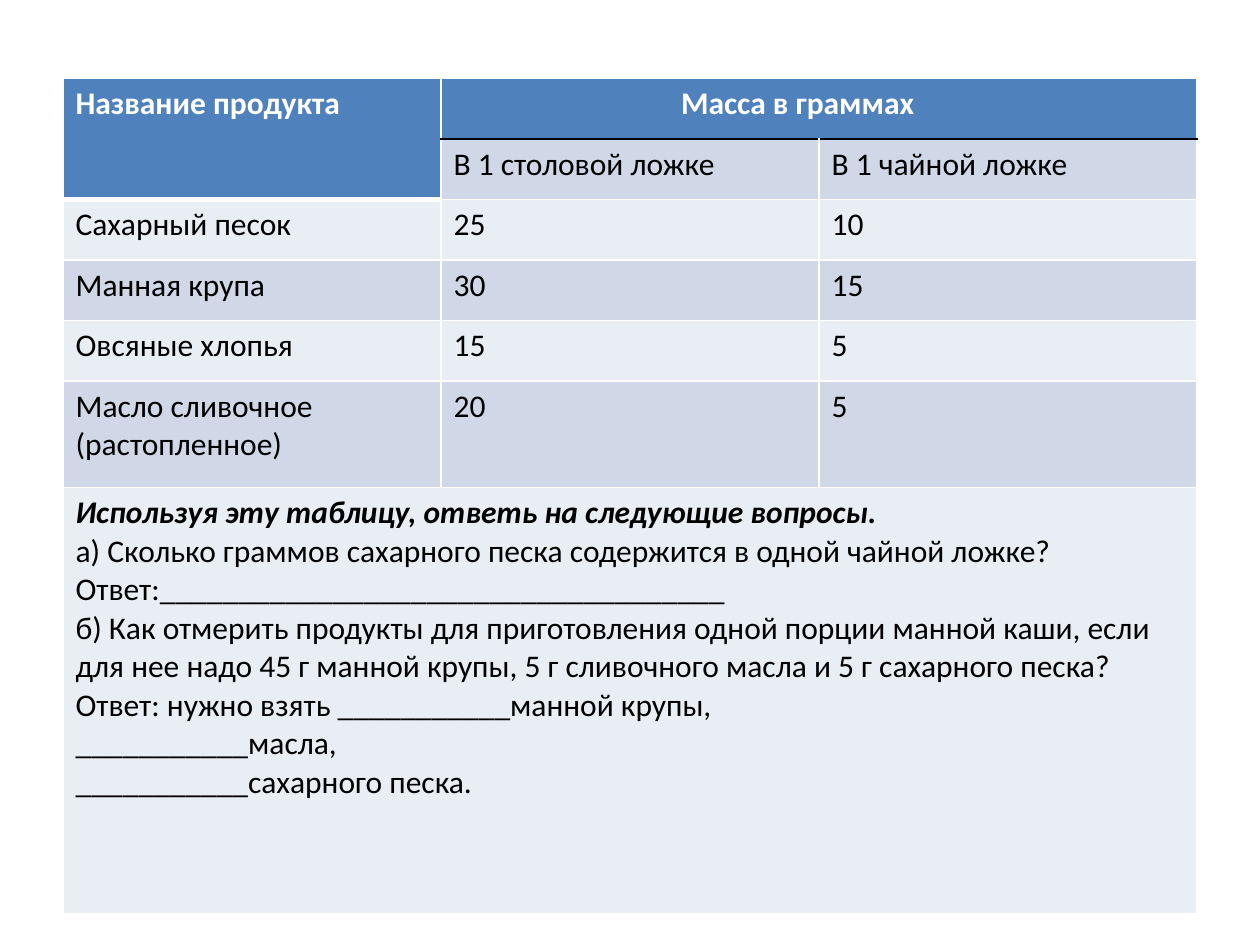
from dataclasses import dataclass

from lxml.etree import SubElement
from pptx import Presentation
from pptx.dml.color import RGBColor as Rgb
from pptx.oxml.ns import qn
from pptx.util import Cm, Pt


@dataclass(frozen=True)
class Theme:
    """Colours, font and type size of the slide."""
    font: str = "Calibri"
    size: float = 18
    header: str = "4F81BD"
    bands: tuple = ("E9EDF4", "D0D8E8")
    light: str = "FFFFFF"
    dark: str = "000000"


@dataclass(frozen=True)
class Box:
    """Position and size of a region in centimetres."""
    left: float
    top: float
    width: float
    height: float


THEME = Theme()
PRODUCTS = [
    ("Сахарный песок", "25", "10"),
    ("Манная крупа", "30", "15"),
    ("Овсяные хлопья", "15", "5"),
    ("Масло сливочное (растопленное)", "20", "5"),
]
TASK = "Используя эту таблицу, ответь на следующие вопросы."
BLANK = "_" * 11
QUESTIONS = [
    "а) Сколько граммов сахарного песка содержится в одной чайной ложке?",
    "Ответ:" + "_" * 36,
    "б) Как отмерить продукты для приготовления одной порции манной каши, "
    "если для нее надо 45 г манной крупы, 5 г сливочного масла и 5 г сахарного песка?",
    f"Ответ: нужно взять {BLANK}манной крупы,",
    f"{BLANK}масла,",
    f"{BLANK}сахарного песка.",
]


def write(paragraph, text, color=THEME.dark, bold=False, italic=False):
    """Add one formatted run to a paragraph."""
    run = paragraph.add_run()
    run.text = text
    run.font.name, run.font.size = THEME.font, Pt(THEME.size)
    run.font.bold, run.font.italic = bold, italic
    run.font.color.rgb = Rgb.from_string(color)


def paint(cell, fill, **edges):
    """Fill a cell and rule its edges, white and 1 pt unless given."""
    properties = cell._tc.get_or_add_tcPr()
    for side in "LRTB":
        color, width = edges.get(side, (THEME.light, 1))
        line = SubElement(properties, qn(f"a:ln{side}"), w=str(Pt(width)))
        solid = SubElement(line, qn("a:solidFill"))
        SubElement(solid, qn("a:srgbClr"), val=color)
    cell.fill.solid()
    cell.fill.fore_color.rgb = Rgb.from_string(fill)


def fill_header(grid):
    """Write the two header rows with their merged cells."""
    divider = (THEME.dark, 1)
    product, mass = grid.cell(0, 0), grid.cell(0, 1)
    product.merge(grid.cell(1, 0))
    mass.merge(grid.cell(0, 2))
    for row in range(2):
        paint(grid.cell(row, 0), THEME.header, B=(THEME.light, 3))
    for column, spoon in enumerate(("В 1 столовой ложке", "В 1 чайной ложке"), 1):
        paint(grid.cell(0, column), THEME.header, B=divider)
        paint(grid.cell(1, column), THEME.bands[1], T=divider)
        write(grid.cell(1, column).text_frame.paragraphs[0], spoon)
    mass.margin_left = Cm(4.84)
    for heading, text in ((product, "Название продукта"), (mass, "Масса в граммах")):
        write(heading.text_frame.paragraphs[0], text, THEME.light, bold=True)


def fill_products(grid, first_row):
    """Write one banded row for each product."""
    for row, product in enumerate(PRODUCTS, first_row):
        for column, text in enumerate(product):
            cell = grid.cell(row, column)
            paint(cell, THEME.bands[row % 2])
            write(cell.text_frame.paragraphs[0], text)


def fill_questions(grid, row):
    """Write the task and its questions across the last row."""
    for column in range(3):
        paint(grid.cell(row, column), THEME.bands[row % 2])
    questions = grid.cell(row, 0)
    questions.merge(grid.cell(row, 2))
    frame = questions.text_frame
    write(frame.paragraphs[0], TASK, bold=True, italic=True)
    for question in QUESTIONS:
        write(frame.add_paragraph(), question)


def add_worksheet(slide, box):
    """Place the product table and its questions in the box."""
    heights = [1.22] * 5 + [2.15]
    heights.append(box.height - sum(heights))
    grid = slide.shapes.add_table(
        len(heights), 3, Cm(box.left), Cm(box.top), Cm(box.width), Cm(box.height)
    ).table
    grid.first_row = grid.horz_banding = False
    for row, height in zip(grid.rows, heights):
        row.height = Cm(height)
    fill_header(grid)
    fill_products(grid, 2)
    fill_questions(grid, len(heights) - 1)


def main():
    """Build and save the slide."""
    deck = Presentation()
    deck.slide_width, deck.slide_height = Cm(25.4), Cm(19.05)
    slide = deck.slides.add_slide(deck.slide_layouts[6])
    add_worksheet(slide, Box(1.27, 1.58, 22.86, 16.84))
    deck.save("out.pptx")


if __name__ == "__main__":
    main()
